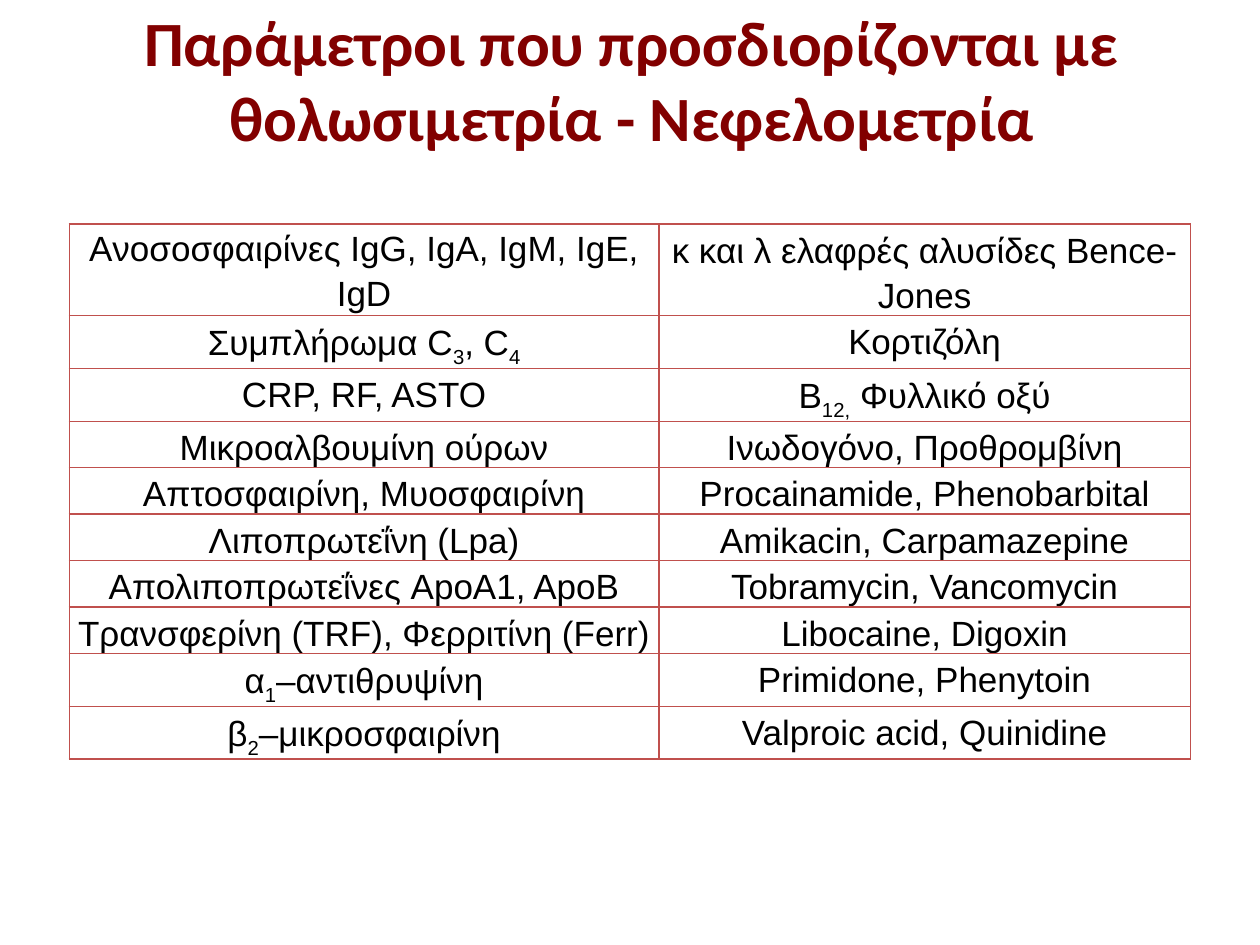
from dataclasses import dataclass

from lxml.etree import SubElement
from pptx import Presentation
from pptx.dml.color import RGBColor
from pptx.enum.text import MSO_ANCHOR as Anchor, MSO_AUTO_SIZE as AutoSize, PP_ALIGN as Align
from pptx.oxml.ns import qn
from pptx.util import Cm, Pt


@dataclass(frozen=True)
class Theme:
    title_font: str = "Calibri"
    body_font: str = "Arial"
    title_size: int = 36
    body_size: int = 20
    title_color: str = "820000"
    body_color: str = "000000"
    border_color: str = "C0504D"
    border_width: int = 1
    line_spacing: float = 1.15


# Parts between bars are subscripts
PARAMETERS = [
    ("Aνοσοσφαιρίνες ΙgG, IgA, IgM, IgE, IgD", "κ και λ ελαφρές αλυσίδες Bence-Jones"),
    ("Συμπλήρωμα C|3|, C|4|", "Κορτιζόλη"),
    ("CRP, RF, ASTO", "Β|12,| Φυλλικό οξύ"),
    ("Μικροαλβουμίνη ούρων", "Ινωδογόνο, Προθρομβίνη"),
    ("Απτοσφαιρίνη, Μυοσφαιρίνη", "Procainamide, Phenobarbital"),
    ("Λιποπρωτεΐνη (Lpa)", "Amikacin, Carpamazepine"),
    ("Aπολιποπρωτεΐνες ApoA1, ApoB", "Tobramycin, Vancomycin"),
    ("Τρανσφερίνη (TRF), Φερριτίνη (Ferr)", "Libocaine, Digoxin"),
    ("α|1|–αντιθρυψίνη", "Primidone, Phenytoin"),
    ("β|2|–μικροσφαιρίνη", "Valproic acid, Quinidine"),
]


class SlideBuilder:
    def __init__(self, slide, theme):
        self.slide = slide
        self.theme = theme

    def style_font(self, font, name, size, color, bold=False):
        font.name = name
        font.size = Pt(size)
        font.bold = bold
        font.color.rgb = RGBColor.from_string(color)

    def add_title(self, text, left, top, width, height):
        theme = self.theme
        title = self.slide.shapes.title
        title.left, title.top, title.width, title.height = left, top, width, height
        frame = title.text_frame
        frame.text = text
        frame.auto_size = AutoSize.NONE
        frame.vertical_anchor = Anchor.MIDDLE
        paragraph = frame.paragraphs[0]
        paragraph.alignment = Align.CENTER
        self.style_font(paragraph.font, theme.title_font, theme.title_size,
                        theme.title_color, bold=True)

    def add_table(self, rows, left, top, column_widths, row_height):
        shape = self.slide.shapes.add_table(
            len(rows), len(column_widths), left, top,
            sum(column_widths), row_height * len(rows))
        table = shape.table
        table.first_row = table.horz_banding = False
        for column, width in zip(table.columns, column_widths):
            column.width = width
        for row_index, row in enumerate(rows):
            for column_index, text in enumerate(row):
                self.fill_cell(table.cell(row_index, column_index), text)
        return table

    def fill_cell(self, cell, text):
        theme = self.theme
        cell.margin_left = cell.margin_right = cell.margin_top = Cm(0.03)
        cell.margin_bottom = 0
        self.add_borders(cell)
        cell.fill.background()
        paragraph = cell.text_frame.paragraphs[0]
        paragraph.alignment = Align.CENTER
        paragraph.line_spacing = theme.line_spacing
        self.style_font(paragraph.font, theme.body_font, theme.body_size, theme.body_color)
        for index, part in enumerate(text.split("|")):
            if part:
                run = paragraph.add_run()
                run.text = part
                if index % 2:
                    run.font._element.set("baseline", "-25000")

    def add_borders(self, cell):
        properties = cell._tc.get_or_add_tcPr()
        for side in ("a:lnL", "a:lnR", "a:lnT", "a:lnB"):
            line = SubElement(properties, qn(side), w=str(Pt(self.theme.border_width)))
            fill = SubElement(line, qn("a:solidFill"))
            SubElement(fill, qn("a:srgbClr"), val=self.theme.border_color)


def main():
    presentation = Presentation()
    presentation.slide_width, presentation.slide_height = Cm(25.4), Cm(19.05)
    slide = presentation.slides.add_slide(presentation.slide_layouts[5])
    builder = SlideBuilder(slide, Theme())

    # Heading
    builder.add_title("Παράμετροι που προσδιορίζονται με θολωσιμετρία - Νεφελομετρία",
                      Cm(1.3), Cm(0.33), Cm(22.86), Cm(2.51))

    # Measured parameters, two per row
    table = builder.add_table(PARAMETERS, Cm(1.4), Cm(4.52),
                              [Cm(11.88), Cm(10.72)], Cm(0.81))
    table.cell(0, 0).margin_top = 0

    presentation.save("out.pptx")


if __name__ == "__main__":
    main()
